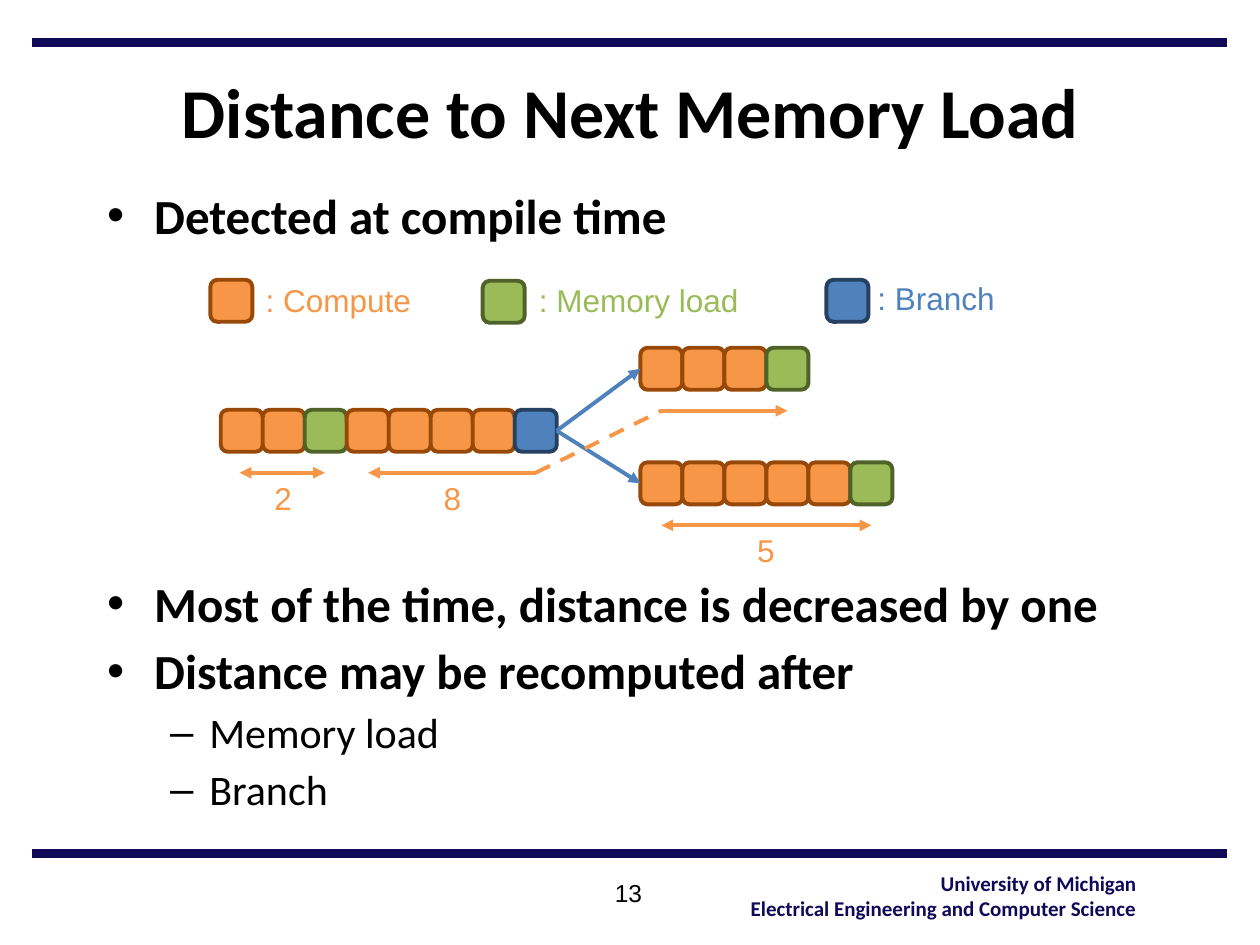
from dataclasses import dataclass
from typing import Any

from pptx import Presentation
from pptx.dml.color import RGBColor
from pptx.enum.dml import MSO_LINE_DASH_STYLE as Dash
from pptx.enum.shapes import MSO_CONNECTOR as Connector
from pptx.enum.shapes import MSO_SHAPE as Preset
from pptx.enum.text import MSO_ANCHOR as Anchor
from pptx.enum.text import PP_ALIGN as Align
from pptx.oxml.ns import qn
from pptx.util import Cm, Pt

NAVY, BLACK = "0F0958", "000000"
ORANGE, GREEN, BLUE = "F79646", "9BBB59", "4F81BD"
CELL = 2.54 / 3
LINE_WIDTH = 2.25

MAIN_LEFT, MAIN_TOP = 4.45, 8.26
TARGET_LEFT, TAKEN_TOP, FALL_TOP = 12.91, 7.01, 9.32
MAIN_ARROW, TAKEN_ARROW, FALL_ARROW = 9.53, 8.28, 10.59
BRANCH_POINT = (MAIN_LEFT + 8 * CELL, MAIN_TOP + CELL / 2)
TARGET_START = TARGET_LEFT + CELL / 2
MAIN_END = 10.8

# Fill and outline for each kind of instruction
INSTRUCTION_COLOURS = {
    "C": (ORANGE, "984807"),
    "M": (GREEN, "4F6228"),
    "B": (BLUE, "254061"),
}


@dataclass(frozen=True)
class TextStyle:
    size: float
    colour: str = BLACK
    name: str = "Calibri"
    bold: bool = False


@dataclass(frozen=True)
class Label:
    lines: tuple[str, ...]
    left: float
    top: float
    width: float
    height: float
    style: TextStyle
    align: Align = Align.CENTER
    anchor: Anchor = Anchor.TOP
    wrap: bool = False


@dataclass(frozen=True)
class BulletStyle:
    symbol: str
    margin: float
    hanging: float
    space_before: float
    text: TextStyle


@dataclass(frozen=True)
class InstructionRow:
    kinds: str
    left: float
    top: float


@dataclass(frozen=True)
class Arrow:
    start: tuple[float, float]
    end: tuple[float, float]
    colour: str = ORANGE
    heads: tuple[str, ...] = ("tailEnd",)
    dash: Dash | None = None
    width: float = LINE_WIDTH


TOPIC = BulletStyle("•", 0.95, 0.95, 5, TextStyle(28, bold=True))
DETAIL = BulletStyle("–", 2.06, 0.79, 4, TextStyle(24))
BOTH_ENDS = ("headEnd", "tailEnd")


def diagram_label(text: str, left: float, top: float, width: float,
                  colour: str = ORANGE) -> Label:
    return Label((text,), left, top, width, 1.02, TextStyle(18, colour, "Arial"))


LABELS = [
    Label(("Distance to Next Memory Load",), 1.91, 1.07, 21.59, 2.31,
          TextStyle(40, bold=True), anchor=Anchor.MIDDLE, wrap=True),
    Label(("University of Michigan", "Electrical Engineering and Computer Science"),
          14.78, 17.42, 8.38, 1.27, TextStyle(12, NAVY, bold=True), Align.RIGHT),
    Label(("13",), 10.03, 17.58, 5.28, 1.27, TextStyle(14, name="Arial"), wrap=True),
    diagram_label(": Compute", 5.08, 5.54, 3.48),
    diagram_label(": Memory load", 10.59, 5.54, 4.57, GREEN),
    diagram_label(": Branch", 17.42, 5.51, 2.9, BLUE),
    diagram_label("2", 5.28, MAIN_ARROW, 0.86),
    diagram_label("8", 8.69, MAIN_ARROW, 0.86),
    diagram_label("5", 15.01, FALL_ARROW, 0.86),
]

ROWS = [
    InstructionRow("C", 4.24, 5.64),
    InstructionRow("M", 9.73, 5.66),
    InstructionRow("B", 16.66, 5.64),
    InstructionRow("CCMCCCCB", MAIN_LEFT, MAIN_TOP),
    InstructionRow("CCCM", TARGET_LEFT, TAKEN_TOP),
    InstructionRow("CCCCCM", TARGET_LEFT, FALL_TOP),
]

ARROWS = [
    *(Arrow((0.64, y), (24.74, y), NAVY, heads=(), width=5) for y in (0.86, 17.2)),
    *(Arrow(BRANCH_POINT, (TARGET_LEFT, top + CELL / 2), BLUE)
      for top in (TAKEN_TOP, FALL_TOP)),
    Arrow((4.83, MAIN_ARROW), (6.55, MAIN_ARROW), heads=BOTH_ENDS),
    Arrow((7.42, MAIN_ARROW), (MAIN_END, MAIN_ARROW), heads=("headEnd",)),
    Arrow((MAIN_END, MAIN_ARROW), (TARGET_START, TAKEN_ARROW), heads=(),
          dash=Dash.DASH),
    Arrow((TARGET_START, TAKEN_ARROW), (TARGET_START + 3 * CELL, TAKEN_ARROW)),
    Arrow((TARGET_START, FALL_ARROW), (TARGET_START + 5 * CELL, FALL_ARROW),
          heads=BOTH_ENDS),
]


def rgb(colour: str) -> RGBColor:
    return RGBColor.from_string(colour)


def apply_format(target: Any, values: dict[str, Any]) -> None:
    for name, value in values.items():
        setattr(target, name, value)


def style_font(font: Any, style: TextStyle) -> None:
    apply_format(font, {"size": Pt(style.size), "name": style.name, "bold": style.bold})
    font.color.rgb = rgb(style.colour)


def style_line(line: Any, colour: str, width: float) -> None:
    line.color.rgb = rgb(colour)
    line.width = Pt(width)


def add_label(slide: Any, label: Label) -> None:
    box = slide.shapes.add_textbox(
        Cm(label.left), Cm(label.top), Cm(label.width), Cm(label.height))
    frame = box.text_frame
    apply_format(frame, {"word_wrap": label.wrap, "vertical_anchor": label.anchor,
                         "text": "\n".join(label.lines)})
    for paragraph in frame.paragraphs:
        paragraph.alignment = label.align
        style_font(paragraph.font, label.style)


def add_bullets(slide: Any, top: float, height: float,
                items: list[tuple[BulletStyle, str]]) -> None:
    frame = slide.shapes.add_textbox(Cm(1.91), Cm(top), Cm(23.06), Cm(height)).text_frame
    frame.word_wrap = True
    frame.text = "\n".join(text for _, text in items)
    for index, (paragraph, (style, _)) in enumerate(zip(frame.paragraphs, items)):
        properties = paragraph._p.get_or_add_pPr()
        properties.set("marL", str(Cm(style.margin)))
        properties.set("indent", str(-Cm(style.hanging)))
        paragraph.space_before = Pt(style.space_before if index else 0)
        font = properties.makeelement(qn("a:buFont"), {"typeface": "Arial"})
        bullet = properties.makeelement(qn("a:buChar"), {"char": style.symbol})
        properties.extend([font, bullet])
        style_font(paragraph.font, style.text)


def add_row(slide: Any, row: InstructionRow) -> None:
    for index, kind in enumerate(row.kinds):
        cell = slide.shapes.add_shape(
            Preset.ROUNDED_RECTANGLE, Cm(row.left + index * CELL), Cm(row.top),
            Cm(CELL), Cm(CELL))
        fill, outline = INSTRUCTION_COLOURS[kind]
        cell.shadow.inherit = False
        cell.fill.solid()
        cell.fill.fore_color.rgb = rgb(fill)
        style_line(cell.line, outline, LINE_WIDTH)


def add_arrow(slide: Any, arrow: Arrow) -> None:
    connector = slide.shapes.add_connector(
        Connector.STRAIGHT, *(Cm(value) for value in arrow.start + arrow.end))
    style_line(connector.line, arrow.colour, arrow.width)
    if arrow.dash:
        connector.line.dash_style = arrow.dash
    properties = connector._element.spPr
    outline = properties.find(qn("a:ln"))
    for end in arrow.heads:
        outline.append(outline.makeelement(qn(f"a:{end}"), {"type": "triangle"}))
    properties.append(properties.makeelement(qn("a:effectLst"), {}))


def main() -> None:
    presentation = Presentation()
    apply_format(presentation, {"slide_width": Cm(25.4), "slide_height": Cm(19.05)})
    slide = presentation.slides.add_slide(presentation.slide_layouts[6])
    add_bullets(slide, 3.61, 1.47, [(TOPIC, "Detected at compile time")])
    add_bullets(slide, 11.43, 5.28, [
        (TOPIC, "Most of the time, distance is decreased by one"),
        (TOPIC, "Distance may be recomputed after"),
        (DETAIL, "Memory load"),
        (DETAIL, "Branch"),
    ])
    for draw, items in ((add_row, ROWS), (add_arrow, ARROWS), (add_label, LABELS)):
        for item in items:
            draw(slide, item)
    presentation.save("out.pptx")


if __name__ == "__main__":
    main()
